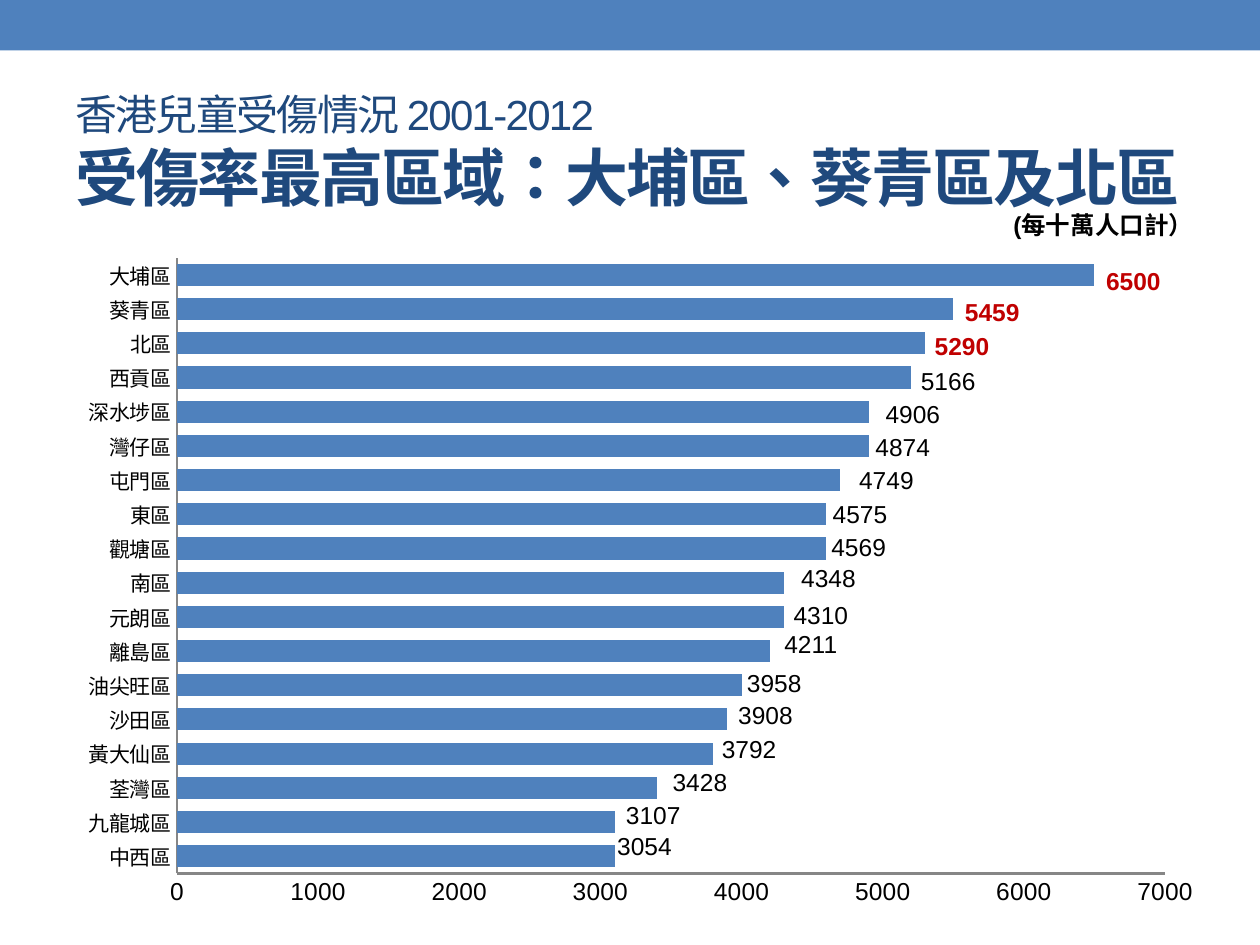
from lxml import etree
from pptx import Presentation
from pptx import util as u
from pptx.chart.data import CategoryChartData
from pptx.dml.color import RGBColor
from pptx.enum import chart as ch, shapes, text
from pptx.oxml import ns

COLS, ROWS = 100, 75
CELL = u.Inches(0.1)
BLUE = RGBColor(0x4F, 0x81, 0xBD)
NAVY = RGBColor(0x1F, 0x49, 0x7D)
RED = RGBColor(0xC0, 0x00, 0x00)
BLACK = RGBColor(0x00, 0x00, 0x00)
GREY = RGBColor(0x86, 0x86, 0x86)
FONT = "Arial"
AXIS_MAX = 7000
HIGHLIGHTED = 3
PLOT = {"x": 0.098, "y": 0.02, "w": 0.859, "h": 0.913}

DISTRICTS = [
    ("大埔區", 6500, 81.3, 1.2), ("葵青區", 5459, 70.1, 3.7),
    ("北區", 5290, 67.7, 6.4), ("西貢區", 5166, 66.6, 9.2),
    ("深水埗區", 4906, 63.8, 11.8), ("灣仔區", 4874, 63.0, 14.4),
    ("屯門區", 4749, 61.7, 17.0), ("東區", 4575, 59.6, 19.7),
    ("觀塘區", 4569, 59.5, 22.3), ("南區", 4348, 57.1, 24.8),
    ("元朗區", 4310, 56.5, 27.7), ("離島區", 4211, 55.7, 30.0),
    ("油尖旺區", 3958, 52.8, 33.1), ("沙田區", 3908, 52.1, 35.7),
    ("黃大仙區", 3792, 50.8, 38.4), ("荃灣區", 3428, 46.9, 41.0),
    ("九龍城區", 3107, 43.2, 43.6), ("中西區", 3054, 42.5, 46.1),
]


def place(box):
    return [u.Emu(round(v * CELL)) for v in box]


def style(font, size, color, bold=False):
    font.name, font.size, font.bold = FONT, u.Pt(size), bold
    font.color.rgb = color


def add_text(s, box, words, size, color, bold=False, align=text.PP_ALIGN.LEFT):
    tf = s.shapes.add_textbox(*place(box)).text_frame
    tf.word_wrap = True
    tf.text = words
    p = tf.paragraphs[0]
    p.alignment = align
    for r in p.runs:
        style(r.font, size, color, bold)
    return tf


def add_band(s, box):
    sp = s.shapes.add_shape(shapes.MSO_SHAPE.RECTANGLE, *place(box))
    sp.shadow.inherit = False
    sp.fill.solid()
    sp.fill.fore_color.rgb = BLUE
    sp.line.fill.background()


def add_title(s, box):
    tf = add_text(s, box, "香港兒童受傷情況 2001-2012\v受傷率最高區域：大埔區、葵青區及北區", 24, NAVY)
    tf.vertical_anchor = text.MSO_ANCHOR.MIDDLE
    runs = tf.paragraphs[0].runs
    style(runs[1].font, 36, NAVY, True)
    for r in runs:
        r.font._element.set("spc", "-100")
        r.font._element.set("lang", "zh-TW")


def set_plot_area(chart):
    area = chart.element.find(".//" + ns.qn("c:plotArea"))
    for old in area.findall(ns.qn("c:layout")):
        area.remove(old)
    layout = etree.Element(ns.qn("c:layout"))
    manual = etree.SubElement(layout, ns.qn("c:manualLayout"))
    settings = {"layoutTarget": "inner", "xMode": "edge", "yMode": "edge", **PLOT}
    for name, value in settings.items():
        etree.SubElement(manual, ns.qn("c:" + name)).set("val", str(value))
    area.insert(0, layout)


def add_rate_chart(s, box):
    data = CategoryChartData()
    upward = DISTRICTS[::-1]
    data.categories = [name for name, *_ in upward]
    data.add_series("Series 1", [round(rate, -2) for _, rate, *_ in upward])
    chart = s.shapes.add_chart(ch.XL_CHART_TYPE.BAR_STACKED, *place(box), data).chart
    chart.has_legend = chart.has_title = False
    style(chart.font, 18, BLACK)
    plot = chart.plots[0]
    plot.gap_width, plot.overlap, plot.vary_by_categories = 55, 100, False
    fill = plot.series[0].format.fill
    fill.solid()
    fill.fore_color.rgb = BLUE
    for axis, size, weight in ((chart.category_axis, 12, 0.75), (chart.value_axis, 14, 1.5)):
        axis.major_tick_mark = axis.minor_tick_mark = ch.XL_TICK_MARK.NONE
        axis.has_major_gridlines = False
        axis.format.line.color.rgb = GREY
        axis.format.line.width = u.Pt(weight)
        style(axis.tick_labels.font, size, BLACK)
    axis = chart.value_axis
    axis.minimum_scale, axis.maximum_scale, axis.major_unit = 0, AXIS_MAX, 1000
    set_plot_area(chart)


def add_rate_labels(s, box):
    left, top = box[:2]
    for i, (_, rate, dx, dy) in enumerate(DISTRICTS):
        top_rate = i < HIGHLIGHTED
        add_text(s, (left + dx, top + dy, 7.1, 3.4), str(rate),
                 14, RED if top_rate else BLACK, top_rate, text.PP_ALIGN.CENTER)


def main():
    prs = Presentation()
    prs.slide_width, prs.slide_height = COLS * CELL, ROWS * CELL
    s = prs.slides.add_slide(prs.slide_layouts[6])
    chart_box = (5.1, 19.4, 91.3, 53.5)
    add_band(s, (0, 0, COLS, 4))
    add_title(s, (5, 5.4, 90, 13.2))
    add_text(s, (76, 16.2, 19.7, 3.4), "(每十萬人口計）", 14, BLACK, True, text.PP_ALIGN.RIGHT)
    add_rate_chart(s, chart_box)
    add_rate_labels(s, chart_box)
    prs.save("out.pptx")


if __name__ == "__main__":
    main()
